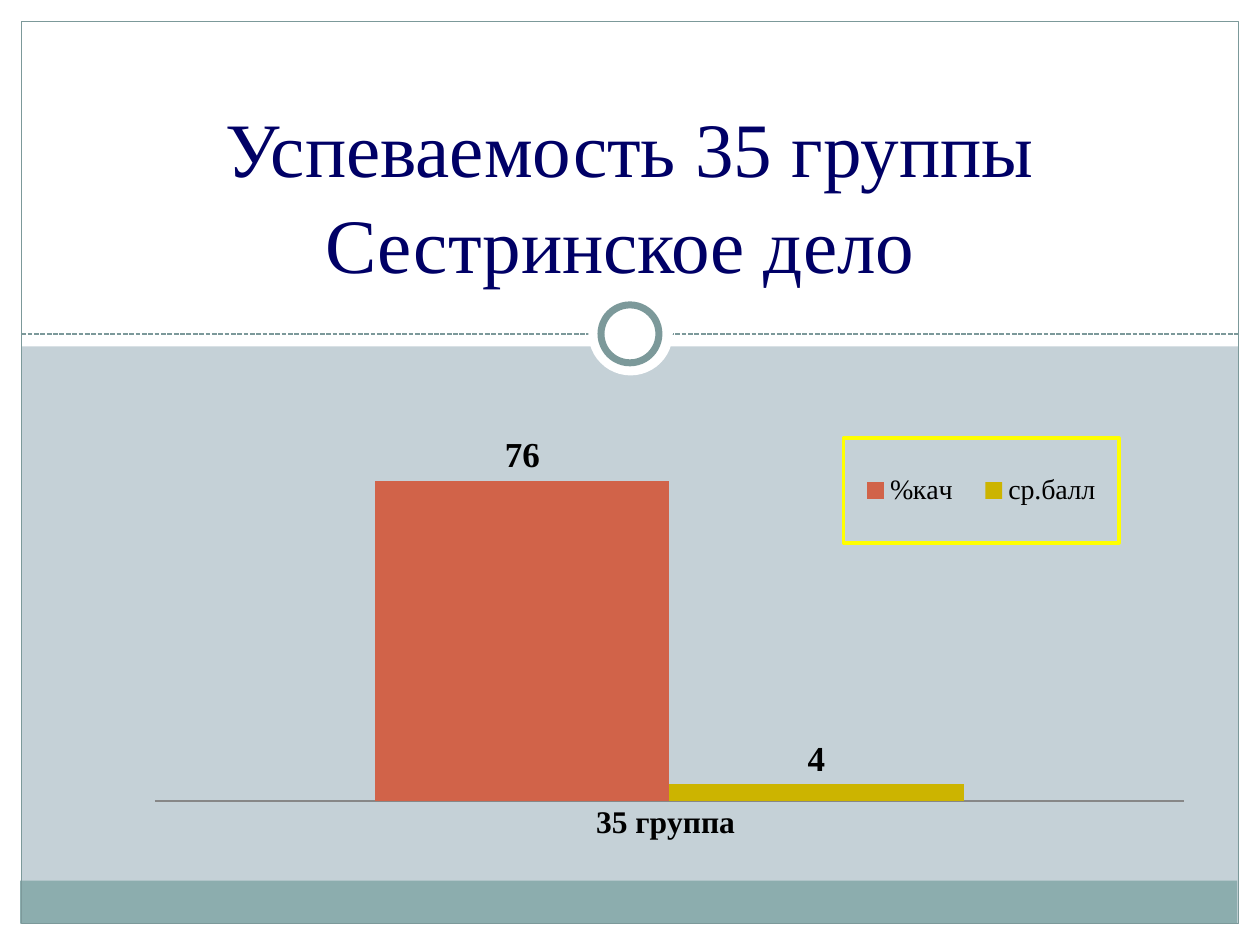
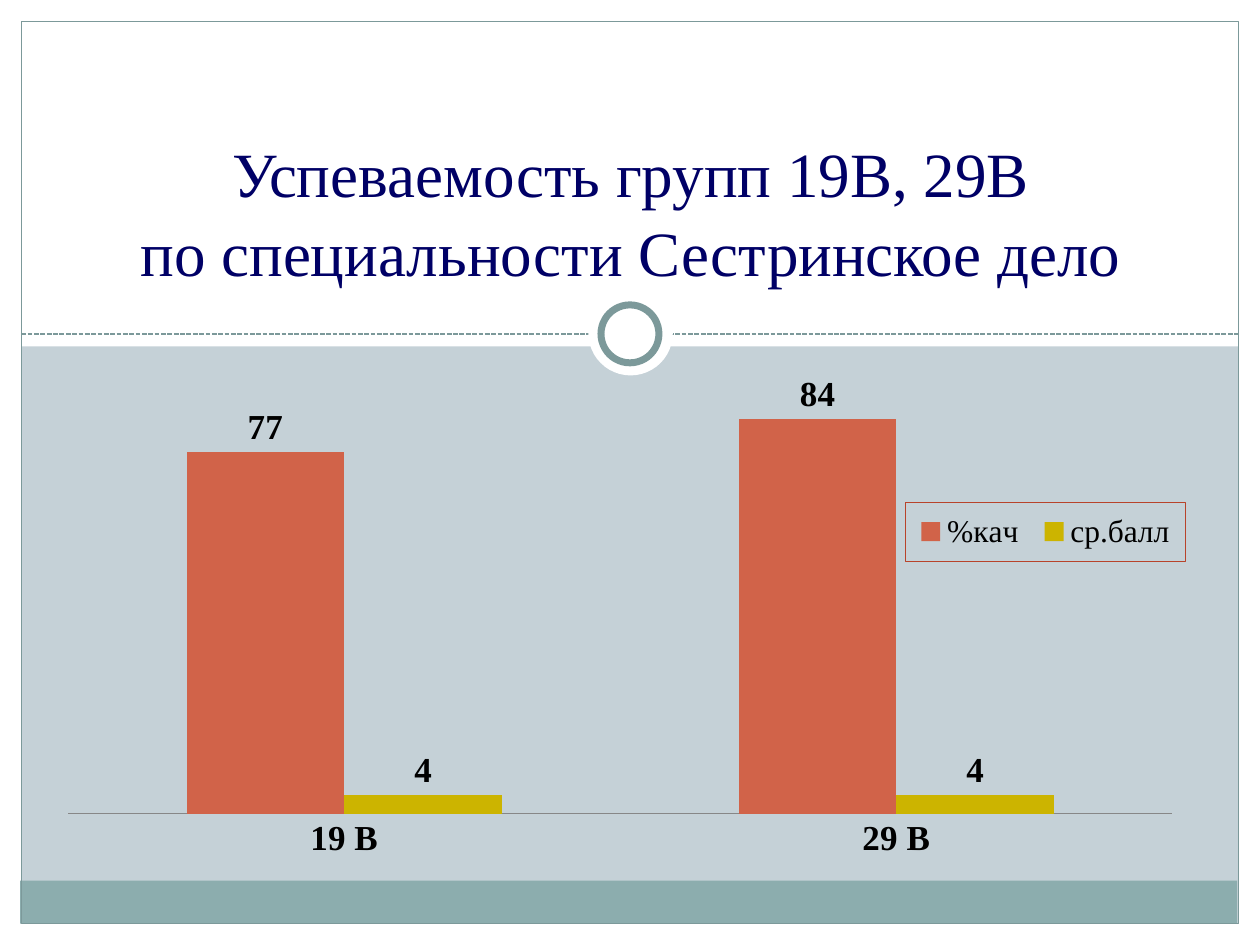
from dataclasses import dataclass
from typing import Optional

from lxml import etree
from pptx import Presentation
from pptx.chart.data import CategoryChartData
from pptx.dml.color import RGBColor
from pptx.enum.chart import (XL_CHART_TYPE, XL_LABEL_POSITION,
                             XL_LEGEND_POSITION, XL_TICK_MARK)
from pptx.enum.dml import MSO_LINE
from pptx.enum.shapes import MSO_CONNECTOR, MSO_SHAPE
from pptx.enum.text import MSO_ANCHOR, PP_ALIGN
from pptx.oxml import parse_xml
from pptx.oxml.ns import nsdecls, qn
from pptx.util import Emu, Inches, Pt

RECT, OVAL = MSO_SHAPE.RECTANGLE, MSO_SHAPE.OVAL
COLUMN = XL_CHART_TYPE.COLUMN_CLUSTERED
OUTSIDE = XL_LABEL_POSITION.OUTSIDE_END
TOP = XL_LEGEND_POSITION.TOP
NO_TICK = XL_TICK_MARK.NONE
DASH = MSO_LINE.SQUARE_DOT
STRAIGHT = MSO_CONNECTOR.STRAIGHT
BOTTOM, CENTER = MSO_ANCHOR.BOTTOM, PP_ALIGN.CENTER

WHITE = RGBColor(0xFF, 0xFF, 0xFF)
BLACK = RGBColor(0x00, 0x00, 0x00)
MIST = RGBColor(0xC5, 0xD1, 0xD7)
TEAL = RGBColor(0x8C, 0xAD, 0xAE)
SLATE = RGBColor(0x7C, 0x99, 0x9A)
NAVY = RGBColor(0x00, 0x00, 0x66)
GRAY = RGBColor(0x87, 0x87, 0x87)
CORAL = RGBColor(0xD1, 0x63, 0x49)
GOLD = RGBColor(0xCC, 0xB4, 0x00)
YELLOW = RGBColor(0xFF, 0xFF, 0x00)
RUST = RGBColor(0xB8, 0x43, 0x2A)

SERIF, BASE = "Times New Roman", "TeX Gyre Schola"

# The slide is a grid of 100 columns by 75 rows
WIDE, HIGH = Inches(10), Inches(7.5)
COLS, ROWS = 100, 75
EDGE = 1.7
RULE = 26.5


@dataclass(frozen=True)
class Box:
    left: float
    top: float
    wide: float
    high: float

    def emu(self) -> tuple:
        return (col(self.left), row(self.top), col(self.wide), row(self.high))


@dataclass(frozen=True)
class Part:
    kind: int
    box: Box
    fill: Optional[RGBColor] = None
    line: float = 0


@dataclass(frozen=True)
class Key:
    """Legend: place in percent of the chart, text size and frame."""
    box: Box
    size: int
    color: RGBColor
    line: float
    style: str


@dataclass(frozen=True)
class Page:
    title: str
    size: int
    head: Box
    area: Box
    plot: Box
    peak: int
    cats: tuple
    marks: tuple
    cat_size: int
    key: Key


def col(n: float) -> Emu:
    return Emu(round(WIDE * n / COLS))


def row(n: float) -> Emu:
    return Emu(round(HIGH * n / ROWS))


# Frame shared by the slides, below and above the dashed rule
MARGINS = (
    Part(RECT, Box(0, ROWS - EDGE, COLS, EDGE), WHITE),
    Part(RECT, Box(COLS - EDGE, 0, EDGE, ROWS), WHITE),
    Part(RECT, Box(0, 0, EDGE, ROWS), WHITE),
    Part(RECT, Box(0, 0, COLS, 27.5), WHITE),
    Part(RECT, Box(1.6, 69.9, 96.6, 3.4), TEAL),
)
RING = (
    Part(RECT, Box(EDGE, EDGE, COLS - 2 * EDGE, ROWS - 2 * EDGE), None, 0.75),
    Part(OVAL, Box(46.7, 23.1, 6.7, 6.7), WHITE),
    Part(OVAL, Box(47.7, 24.2, 4.6, 4.6), WHITE, 4),
)

SERIES = (("%кач", CORAL), ("ср.балл", GOLD))
PAGES = (
    Page("Успеваемость 35 группы\vСестринское дело ", 44,
         Box(7.5, 4.2, 85, 19.2), Box(10.6, 32, 85, 35.4),
         Box(2, 13.6, 96.1, 75.6), 80,
         ("35 группа ",), ((76,), (4,)), 18,
         Key(Box(66.3, 7.8, 25.7, 23.5), 16, YELLOW, 2, "dbl")),
    Page("Успеваемость групп 19В, 29В\v по специальности Сестринское дело ", 36,
         Box(2.8, 4.2, 94.5, 19.2), Box(3.5, 25.7, 91.3, 43.3),
         Box(2.1, 12.3, 96, 77.5), 90,
         ("19 В", "29 В"), ((77, 84), (4, 4)), 20,
         Key(Box(74.9, 32.7, 24.3, 10.8), 18, RUST, 0.75, "sng")),
)


def draw(slide, part: Part) -> None:
    shape = slide.shapes.add_shape(part.kind, *part.box.emu())
    shape.shadow.inherit = False
    if part.fill is None:
        shape.fill.background()
    else:
        shape.fill.solid()
        shape.fill.fore_color.rgb = part.fill
    if part.line:
        shape.line.color.rgb = SLATE
        shape.line.width = Pt(part.line)
    else:
        shape.line.fill.background()


def add_rule(slide) -> None:
    rule = slide.shapes.add_connector(
        STRAIGHT, col(EDGE), row(RULE), col(COLS - EDGE), row(RULE))
    rule.line.color.rgb = SLATE
    rule.line.width = Pt(0.9)
    rule.line.dash_style = DASH
    etree.SubElement(rule._element.spPr, qn("a:effectLst"))


def add_frame(slide) -> None:
    slide.background.fill.solid()
    slide.background.fill.fore_color.rgb = MIST
    for part in MARGINS:
        draw(slide, part)
    add_rule(slide)
    for part in RING:
        draw(slide, part)


def set_font(font, size: int, bold: bool = False,
             name: str = SERIF, color: RGBColor = BLACK) -> None:
    font.name = name
    font.size = Pt(size)
    font.bold = bold
    font.color.rgb = color


def add_title(slide, page: Page) -> None:
    frame = slide.shapes.add_textbox(*page.head.emu()).text_frame
    frame.word_wrap = True
    frame.vertical_anchor = BOTTOM
    para = frame.paragraphs[0]
    para.text = page.title
    para.alignment = CENTER
    para.line_spacing = 1.04
    for run in para.runs:
        set_font(run.font, page.size, color=NAVY)


def place(node, index: int, box: Box, inner: bool = False) -> None:
    """Fix a chart part at shares of the chart's size."""
    for old in node.findall(qn("c:layout")):
        node.remove(old)
    layout = etree.Element(qn("c:layout"))
    manual = etree.SubElement(layout, qn("c:manualLayout"))
    pairs = [("layoutTarget", "inner")] if inner else []
    pairs += [("xMode", "edge"), ("yMode", "edge")]
    pairs += [(tag, f"{share / 100:.3f}") for tag, share in
              zip("xywh", (box.left, box.top, box.wide, box.high))]
    for tag, value in pairs:
        etree.SubElement(manual, qn("c:" + tag)).set("val", value)
    node.insert(index, layout)


def add_key(chart, key: Key) -> None:
    chart.has_legend = True
    legend = chart.legend
    legend.position = TOP
    legend.include_in_layout = False
    set_font(legend.font, key.size)
    node = legend._element
    place(node, 1, key.box)
    border = parse_xml(
        f'<c:spPr {nsdecls("c", "a")}><a:noFill/>'
        f'<a:ln w="{Pt(key.line)}" cmpd="{key.style}"><a:solidFill>'
        f'<a:srgbClr val="{key.color}"/></a:solidFill></a:ln></c:spPr>')
    node.find(qn("c:txPr")).addprevious(border)


def add_bars(slide, page: Page) -> None:
    data = CategoryChartData()
    data.categories = page.cats
    for (name, _), marks in zip(SERIES, page.marks):
        data.add_series(name, marks)
    chart = slide.shapes.add_chart(COLUMN, *page.area.emu(), data).chart
    chart.has_title = False
    set_font(chart.font, 10, name=BASE)

    # Axes
    axis = chart.category_axis
    axis.major_tick_mark = axis.minor_tick_mark = NO_TICK
    axis.format.line.color.rgb = GRAY
    set_font(axis.tick_labels.font, page.cat_size, True)
    scale = chart.value_axis
    scale.minimum_scale, scale.maximum_scale = 0, page.peak
    scale.has_major_gridlines = False
    scale.visible = False

    # Columns and their values
    plot = chart.plots[0]
    plot.gap_width, plot.overlap = 150, 0
    plot.vary_by_categories = False
    for bar, (_, color) in zip(plot.series, SERIES):
        bar.format.fill.solid()
        bar.format.fill.fore_color.rgb = color
        labels = bar.data_labels
        labels.show_value = True
        labels.position = OUTSIDE
        set_font(labels.font, 20, True)

    place(chart._chartSpace.chart.plotArea, 0, page.plot, True)
    add_key(chart, page.key)


def main() -> None:
    deck = Presentation()
    deck.slide_width, deck.slide_height = WIDE, HIGH
    blank = deck.slide_layouts[6]
    for page in PAGES:
        slide = deck.slides.add_slide(blank)
        add_frame(slide)
        add_title(slide, page)
        add_bars(slide, page)
    deck.save("out.pptx")


if __name__ == "__main__":
    main()
